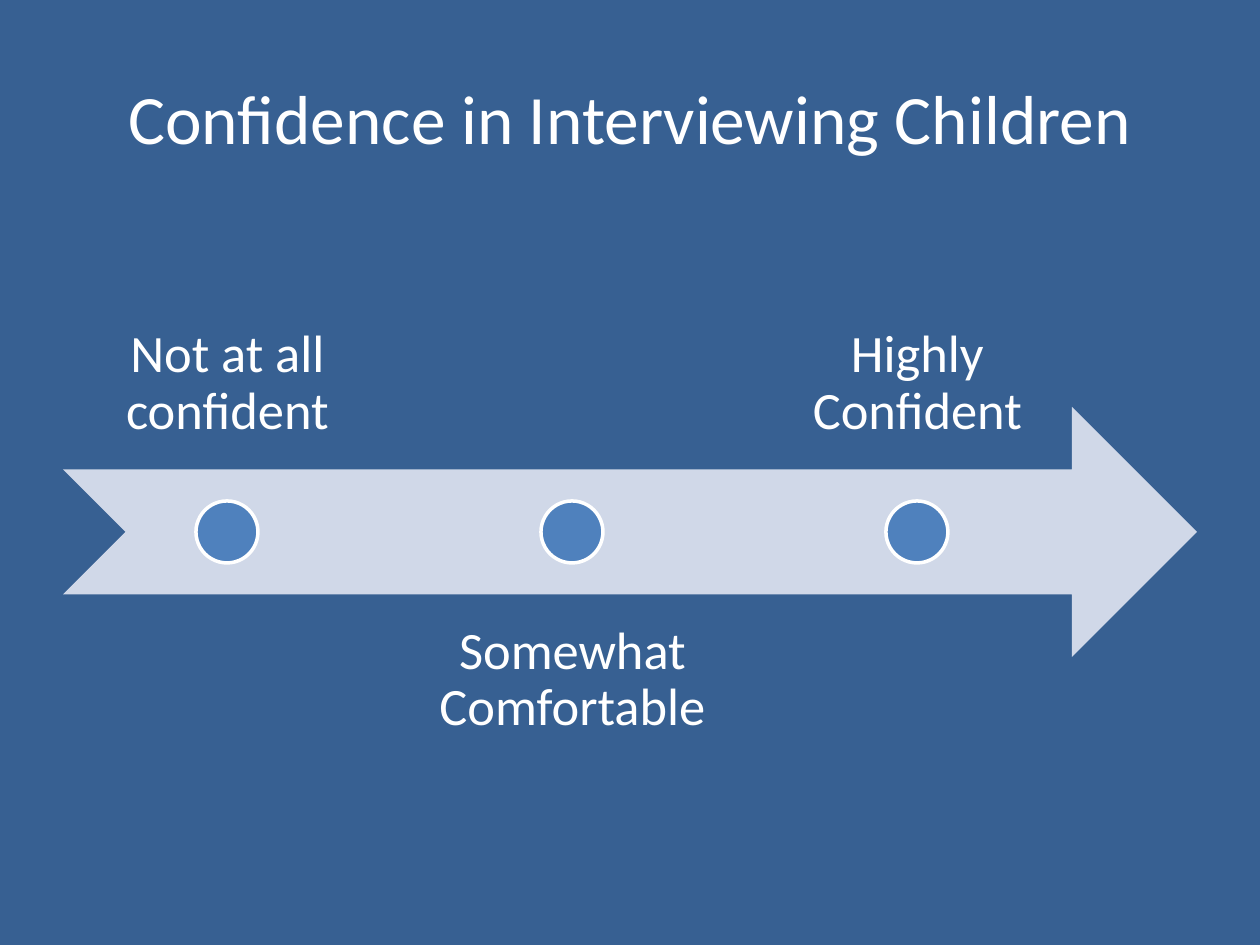
from pptx import Presentation
from pptx.dml.color import RGBColor
from pptx.enum.shapes import MSO_SHAPE
from pptx.enum.text import MSO_ANCHOR, PP_ALIGN
from pptx.util import Pt

PX = 914400 // 126
WHITE = "FFFFFF"


def color(hex_string):
    return RGBColor.from_string(hex_string)


def write_centered(frame, text, size, anchor):
    frame.word_wrap = True
    frame.vertical_anchor = anchor
    paragraph = frame.paragraphs[0]
    paragraph.alignment = PP_ALIGN.CENTER
    run = paragraph.add_run()
    run.text = text
    run.font.name = "Calibri"
    run.font.size = Pt(size)
    run.font.color.rgb = color(WHITE)
    return paragraph


presentation = Presentation()
presentation.slide_width = 1260 * PX
presentation.slide_height = 945 * PX
slide = presentation.slides.add_slide(presentation.slide_layouts[5])
slide.background.fill.solid()
slide.background.fill.fore_color.rgb = color("376092")

title = slide.shapes.title
title.left, title.top, title.width, title.height = 63 * PX, 38 * PX, 1134 * PX, 157 * PX
write_centered(title.text_frame, "Confidence in Interviewing Children", 39.6, MSO_ANCHOR.MIDDLE)

scale_arrow = slide.shapes.add_shape(
    MSO_SHAPE.NOTCHED_RIGHT_ARROW, 63 * PX, 407 * PX, 1134 * PX, 250 * PX)
scale_arrow.shadow.inherit = False
scale_arrow.fill.solid()
scale_arrow.fill.fore_color.rgb = color("D0D8E8")
scale_arrow.line.fill.background()

# Labels alternate above and below the arrow, each centred on its dot.
LABEL_WIDTH, DOT_SIZE, STEP = 329, 62, 345
levels = [
    ("Not at all confident", 220, MSO_ANCHOR.BOTTOM),
    ("Somewhat Comfortable", 595, MSO_ANCHOR.TOP),
    ("Highly Confident", 220, MSO_ANCHOR.BOTTOM),
]
for index, (level, top, anchor) in enumerate(levels):
    left = 63 + index * STEP
    label = slide.shapes.add_textbox(left * PX, top * PX, LABEL_WIDTH * PX, 250 * PX)
    frame = label.text_frame
    frame.margin_left = frame.margin_right = 29 * PX
    frame.margin_top = frame.margin_bottom = 29 * PX
    write_centered(frame, level, 30, anchor).line_spacing = 0.9

    dot_left = left + (LABEL_WIDTH - DOT_SIZE) // 2
    dot = slide.shapes.add_shape(
        MSO_SHAPE.OVAL, dot_left * PX, 501 * PX, DOT_SIZE * PX, DOT_SIZE * PX)
    dot.shadow.inherit = False
    dot.fill.solid()
    dot.fill.fore_color.rgb = color("4F81BD")
    dot.line.color.rgb = color(WHITE)
    dot.line.width = Pt(2)

presentation.save("out.pptx")
